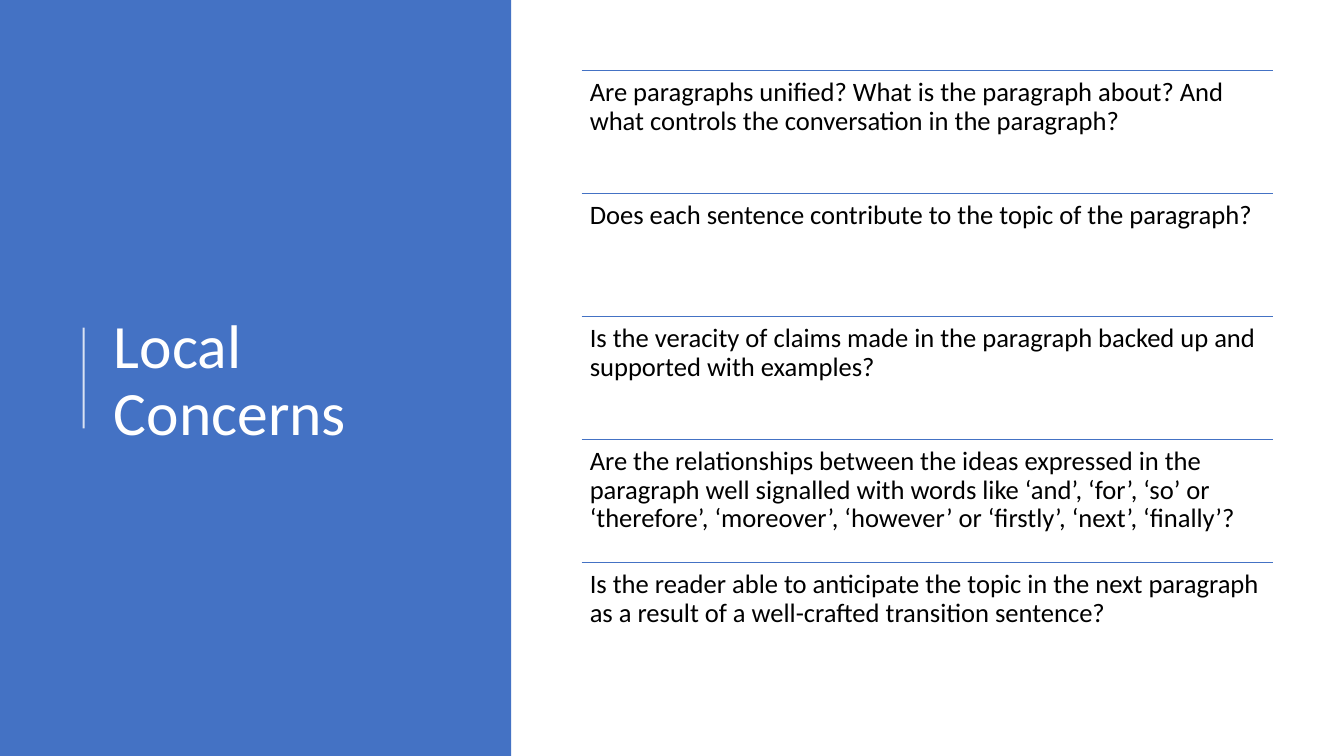
from dataclasses import dataclass

from lxml import etree
from pptx import Presentation
from pptx import util as u
from pptx.dml.color import RGBColor
from pptx.enum import shapes, text
from pptx.oxml import ns


@dataclass(frozen=True)
class Theme:
    """Colours, font and type sizes of the slide."""
    accent: str = "4472C4"
    light: str = "FFFFFF"
    dark: str = "000000"
    font: str = "Calibri"
    title_size: int = 44
    body_size: int = 19


class SlideBuilder:
    """Draws styled elements on the current page."""

    def __init__(self, page, theme):
        self.page = page
        self.theme = theme

    def panel(self, left, top, width, height):
        """Add a filled rectangle without an outline."""
        panel = self.page.shapes.add_shape(
            shapes.MSO_SHAPE.RECTANGLE, *map(u.Inches, (left, top, width, height)))
        panel.shadow.inherit = False
        panel.fill.solid()
        panel.fill.fore_color.rgb = RGBColor.from_string(self.theme.accent)
        panel.line.fill.background()

    def rule(self, start, end, color, weight, opacity=100):
        """Add a straight line, optionally translucent."""
        rule = self.page.shapes.add_connector(
            shapes.MSO_CONNECTOR.STRAIGHT, *map(u.Inches, start + end))
        rule.line.color.rgb = RGBColor.from_string(color)
        rule.line.width = u.Pt(weight)
        properties = rule._element.spPr
        etree.SubElement(properties, ns.qn("a:effectLst"))
        if opacity < 100:
            fill = properties.find(".//" + ns.qn("a:srgbClr"))
            etree.SubElement(fill, ns.qn("a:alpha"), val=str(opacity * 1000))

    def words(self, content, area, size, color, anchor, margins):
        """Add a wrapped text box with one paragraph."""
        box = self.page.shapes.add_textbox(*map(u.Inches, area))
        frame = box.text_frame
        horizontal, vertical = map(u.Inches, margins)
        frame_format = {
            "word_wrap": True, "vertical_anchor": anchor,
            "margin_left": horizontal, "margin_right": horizontal,
            "margin_top": vertical, "margin_bottom": vertical,
        }
        for name, value in frame_format.items():
            setattr(frame, name, value)
        para = frame.paragraphs[0]
        para.line_spacing = 0.9
        span = para.add_run()
        span.text = content
        for name, value in {"name": self.theme.font, "size": u.Pt(size)}.items():
            setattr(span.font, name, value)
        span.font.color.rgb = RGBColor.from_string(color)


QUESTIONS = (
    "Are paragraphs unified? What is the paragraph about? "
    "And what controls the conversation in the paragraph?",
    "Does each sentence contribute to the topic of the paragraph?",
    "Is the veracity of claims made in the paragraph backed up "
    "and supported with examples?",
    "Are the relationships between the ideas expressed in the paragraph "
    "well signalled with words like ‘and’, ‘for’, ‘so’ or ‘therefore’, "
    "‘moreover’, ‘however’ or ‘firstly’, ‘next’, ‘finally’?",
    "Is the reader able to anticipate the topic in the next paragraph "
    "as a result of a well-crafted transition sentence?",
)


def main():
    """Build the slide and save the deck."""
    deck = Presentation()
    deck.slide_width, deck.slide_height = u.Inches(13.33), u.Inches(7.5)
    theme = Theme()
    builder = SlideBuilder(deck.slides.add_slide(deck.slide_layouts[6]), theme)

    builder.panel(0, 0, 5.07, 7.5)
    builder.rule((0.83, 4.25), (0.83, 3.25), theme.light, 1.5, opacity=80)
    builder.words("Local Concerns", (1.03, 0.78, 3.69, 6.02), theme.title_size,
                  theme.light, text.MSO_ANCHOR.MIDDLE, (0.1, 0.05))

    left, first_top, width, row_height = 5.77, 0.7, 6.86, 1.22
    for row, question in enumerate(QUESTIONS):
        top = first_top + row * row_height
        builder.rule((left, top), (left + width, top), theme.accent, 1)
        builder.words(question, (left, top, width, row_height), theme.body_size,
                      theme.dark, text.MSO_ANCHOR.TOP, (0.08, 0.08))

    deck.save("out.pptx")


if __name__ == "__main__":
    main()
